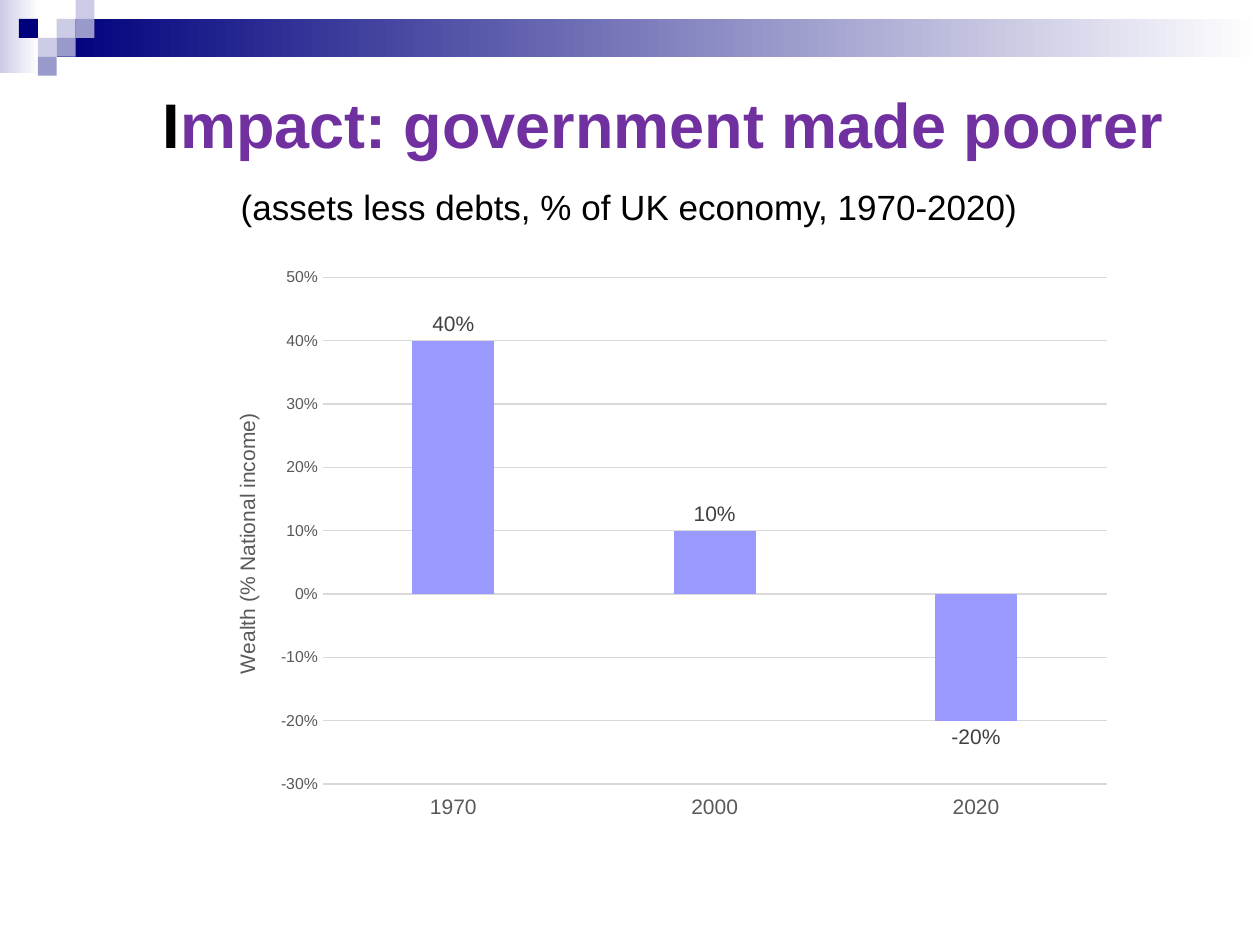
import pptx
import pptx.chart.data
import pptx.dml.color
import pptx.enum.chart
import pptx.enum.shapes
import pptx.enum.text
import pptx.oxml
import pptx.oxml.ns
import pptx.util

C = {"navy": "00007D", "mid": "9999CC", "pale": "CCCCE6", "white": "FFFFFF",
     "purple": "7030A0", "black": "000000", "bar": "9999FF",
     "axis": "595959", "grid": "D9D9D9", "label": "404040"}
FONT = "Arial"
TITLE = [("I", "black"), ("mpact: government made poorer", "purple")]
SUBTITLE = "(assets less debts, % of UK economy, 1970-2020)"
AXIS_TITLE = "Wealth (% National income)"
WEALTH = {"1970": 0.4, "2000": 0.1, "2020": -0.2}

CELL = 0.15
BANDS = [((0, 0, 0.31, 0.58), "pale"), ((3 * CELL, CELL, 9.55, 2 * CELL), "navy")]
SQUARES = [(3, 1, "pale"), (4, 0, "pale"), (4, 1, "mid"), (2, 2, "pale"),
           (1, 1, "navy"), (3, 2, "mid"), (2, 3, "mid")]  # column, row, colour

TITLE_BOX = (0.5, -0.19, 9, 2.19)
BODY_BOX = (0.5, 1.39, 11.35, 5.83)
CHART_BOX = (1.61, 2.02, 7.32, 4.57)


def rgb(name):
    return pptx.dml.color.RGBColor.from_string(C[name])


def inches(box):
    return [pptx.util.Inches(v) for v in box]


def style(font, size, color, bold=False):
    font.name, font.size, font.bold = FONT, pptx.util.Pt(size), bold
    font.color.rgb = rgb(color)


def add_text(p, text, **fmt):
    r = p.add_run()
    r.text = text
    style(r.font, **fmt)


def place(sp, box, left, top, anchor):
    """Move a placeholder to the front, set its insets, return its paragraph."""
    sp.left, sp.top, sp.width, sp.height = inches(box)
    sp._element.getparent().append(sp._element)
    tf = sp.text_frame
    tf.word_wrap = True
    tf.auto_size = pptx.enum.text.MSO_AUTO_SIZE.NONE
    tf.vertical_anchor = anchor
    tf.margin_left, tf.margin_top = inches((left, top))
    tf.margin_right = 0
    p = tf.paragraphs[0]
    p.alignment = pptx.enum.text.PP_ALIGN.LEFT
    p.space_before = pptx.util.Pt(0)
    return p


def add_block(shapes, box, color, fade=False):
    sp = shapes.add_shape(pptx.enum.shapes.MSO_SHAPE.RECTANGLE, *inches(box))
    sp.shadow.inherit = False
    sp.line.fill.background()
    if fade:
        sp.fill.gradient()
        sp.fill.gradient_angle = 0
        for stop, name in zip(sp.fill.gradient_stops, (color, "white")):
            stop.color.rgb = rgb(name)
    else:
        sp.fill.solid()
        sp.fill.fore_color.rgb = rgb(color)


def set_layout(parent, index, target=None, **shares):
    """Fix a chart part's place, in shares of the chart."""
    for old in parent.findall(pptx.oxml.ns.qn("c:layout")):
        parent.remove(old)
    inner = f'<c:layoutTarget val="{target}"/>' if target else ""
    inner += "".join(f'<c:{k}Mode val="edge"/>' for k in "xy")
    inner += "".join(f'<c:{k} val="{v}"/>' for k, v in shares.items())
    parent.insert(index, pptx.oxml.parse_xml(
        f'<c:layout {pptx.oxml.ns.nsdecls("c")}><c:manualLayout>{inner}'
        '</c:manualLayout></c:layout>'))


def add_wealth_chart(shapes):
    xl = pptx.enum.chart
    data = pptx.chart.data.CategoryChartData(number_format="0%")
    data.categories = list(WEALTH)
    data.add_series("Series 1", list(WEALTH.values()))
    chart = shapes.add_chart(xl.XL_CHART_TYPE.COLUMN_CLUSTERED,
                             *inches(CHART_BOX), data).chart
    chart.has_legend = chart.has_title = False
    style(chart.font, 10, "black")

    plot = chart.plots[0]
    plot.gap_width, plot.overlap, plot.vary_by_categories = 219, -27, False
    ser = plot.series[0]
    ser.invert_if_negative = False
    ser.format.fill.solid()
    ser.format.fill.fore_color.rgb = rgb("bar")
    labels = ser.data_labels
    labels.show_value = True
    labels.position = xl.XL_LABEL_POSITION.OUTSIDE_END
    style(labels.font, 12, "label")

    cat, val = chart.category_axis, chart.value_axis
    for axis, size in ((cat, 12), (val, 9)):
        axis.major_tick_mark = axis.minor_tick_mark = xl.XL_TICK_MARK.NONE
        style(axis.tick_labels.font, size, "axis")
    cat.tick_label_position = xl.XL_TICK_LABEL_POSITION.LOW
    val.minimum_scale, val.maximum_scale, val.major_unit = -0.3, 0.5, 0.1
    val.tick_labels.number_format = "0%"
    val.tick_labels.number_format_is_linked = False
    val.format.line.fill.background()
    val.has_major_gridlines = True
    for line in (cat.format.line, val.major_gridlines.format.line):
        line.color.rgb = rgb("grid")
        line.width = pptx.util.Pt(0.75)
    title = val.axis_title
    add_text(title.text_frame.paragraphs[0], AXIS_TITLE, size=12, color="axis")
    set_layout(title._element, 1, x=0.03, y=0.27)
    set_layout(chart._chartSpace.chart.plotArea, 0, "inner",
               x=0.13, y=0.04, w=0.85, h=0.88)


def main():
    prs = pptx.Presentation()
    prs.slide_width, prs.slide_height = inches((10, 7.5))
    slide = prs.slides.add_slide(prs.slide_layouts[1])
    shapes = slide.shapes
    title, body = shapes.title, slide.placeholders[1]

    for box, color in BANDS:
        add_block(shapes, box, color, fade=True)
    for col, row, color in SQUARES:
        add_block(shapes, (col * CELL, row * CELL, CELL, CELL), color)

    anchor = pptx.enum.text.MSO_ANCHOR
    p = place(title, TITLE_BOX, 0.79, 0.19, anchor.MIDDLE)
    for text, color in TITLE:
        add_text(p, text, size=36, color=color, bold=True)

    p = place(body, BODY_BOX, 1.41, 0.08, anchor.TOP)
    pPr = p._p.get_or_add_pPr()
    pPr.set("marL", "0")
    pPr.set("indent", "0")
    pPr.append(pptx.oxml.parse_xml(f'<a:buNone {pptx.oxml.ns.nsdecls("a")}/>'))
    add_text(p, SUBTITLE, size=20, color="black")

    add_wealth_chart(shapes)
    prs.save("out.pptx")


if __name__ == "__main__":
    main()
